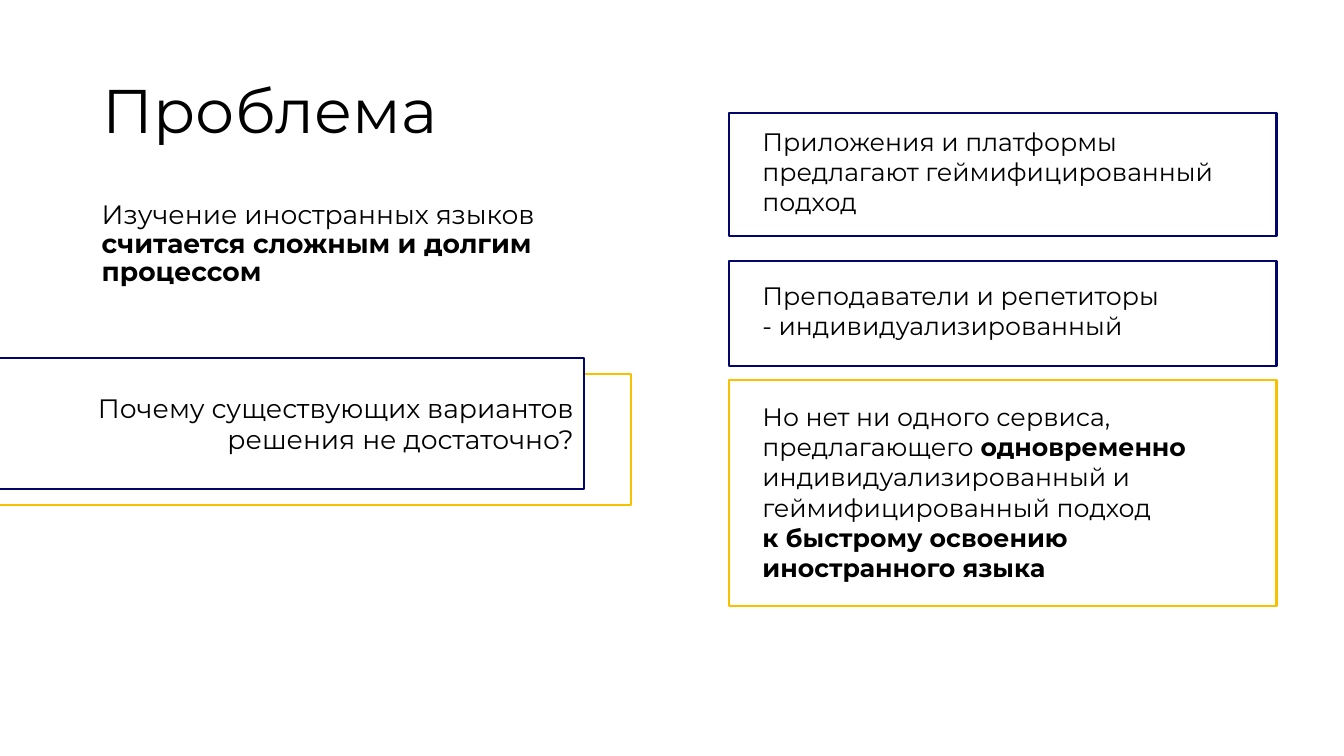
from pptx import Presentation
from pptx import util as u
from pptx.dml.color import RGBColor
from pptx.enum import shapes, text

SLIDE_W, SLIDE_H = u.Inches(13.33), u.Inches(7.5)
FONT = "Montserrat"
BLACK, WHITE, NAVY, YELLOW = "000000", "FFFFFF", "02056A", "F8C100"
LEFT, RIGHT = text.PP_ALIGN.LEFT, text.PP_ALIGN.RIGHT
TOP, MIDDLE = text.MSO_ANCHOR.TOP, text.MSO_ANCHOR.MIDDLE


def color(hex_value):
    return RGBColor.from_string(hex_value)


def set_attributes(target, values):
    for name, value in values.items():
        setattr(target, name, value)


def place(box):
    """Turn a box in percent of the slide into lengths."""
    return [round(share / 100 * side)
            for share, side in zip(box, (SLIDE_W, SLIDE_H) * 2)]


def write(frame, paragraphs, size, anchor=TOP, **paragraph_format):
    """Fill a frame; each paragraph is a list of (wording, bold) pairs."""
    set_attributes(frame, {"word_wrap": True, "vertical_anchor": anchor,
                           "auto_size": text.MSO_AUTO_SIZE.NONE})
    for number, pieces in enumerate(paragraphs):
        paragraph = frame.add_paragraph() if number else frame.paragraphs[0]
        set_attributes(paragraph, {"alignment": LEFT, **paragraph_format})
        for wording, bold in pieces:
            run = paragraph.add_run()
            run.text = wording
            set_attributes(run.font, {"name": FONT, "size": u.Pt(size), "bold": bold})
            run.font.color.rgb = color(BLACK)


def outline(slide, box, line, fill=None):
    frame = slide.shapes.add_shape(shapes.MSO_SHAPE.RECTANGLE, *place(box))
    frame.shadow.inherit = False
    if fill:
        frame.fill.solid()
        frame.fill.fore_color.rgb = color(fill)
    else:
        frame.fill.background()
    frame.line.color.rgb = color(line)
    frame.line.width = u.Pt(1.5)
    return frame


def add_heading(slide, box):
    title = slide.shapes.title
    set_attributes(title, dict(zip(("left", "top", "width", "height"), place(box))))
    write(title.text_frame, [[("Проблема", False)]], 44, MIDDLE, line_spacing=0.9)


def add_lead(slide, box):
    lead = slide.shapes.add_textbox(*place(box))
    write(lead.text_frame,
          [[("Изучение иностранных языков ", False),
            ("считается сложным и долгим процессом", True)]],
          19, line_spacing=0.9, space_before=u.Pt(10))


def add_question(slide, box):
    left, top, width, height = box
    outline(slide, (left - 3.23, top + 2.13, width + 6.75, height), YELLOW)
    question = outline(slide, box, NAVY, WHITE)
    write(question.text_frame,
          [[("Почему существующих вариантов", False)],
           [("решения не достаточно?", False)]],
          19, MIDDLE, alignment=RIGHT)


def add_answer(slide, box, line, text_drop, text_height, paragraphs):
    left, top, width, height = box
    outline(slide, box, line)
    answer = slide.shapes.add_textbox(
        *place((left + 1.75, top + text_drop, width - 3.6, text_height)))
    write(answer.text_frame, paragraphs, 18)


def add_answers(slide, left, width):
    answers = [
        (14.93, 16.27, NAVY, 1.07, 17.47,
         [[("Приложения и платформы предлагают геймифицированный подход", False)]]),
        (34.53, 13.87, NAVY, 1.87, 9.47,
         [[("Преподаватели и репетиторы", False)],
          [("- индивидуализированный", False)]]),
        (50.27, 29.87, YELLOW, 2.13, 25.6,
         [[("Но нет ни одного сервиса, предлагающего ", False),
           ("одновременно", True),
           (" индивидуализированный и геймифицированный подход", False)],
          [("к быстрому освоению иностранного языка", True)]]),
    ]
    for top, height, *content in answers:
        add_answer(slide, (left, top, width, height), *content)


def main():
    deck = Presentation()
    set_attributes(deck, {"slide_width": SLIDE_W, "slide_height": SLIDE_H})
    slide = deck.slides.add_slide(deck.slide_layouts.get_by_name("Title Only"))
    add_heading(slide, (6.9, 5.33, 86.27, 19.33))
    add_lead(slide, (6.83, 26, 38.93, 13.87))
    add_question(slide, (-5.25, 47.33, 48.69, 17.33))
    add_answers(slide, 54.24, 40.74)
    deck.save("out.pptx")


if __name__ == "__main__":
    main()
